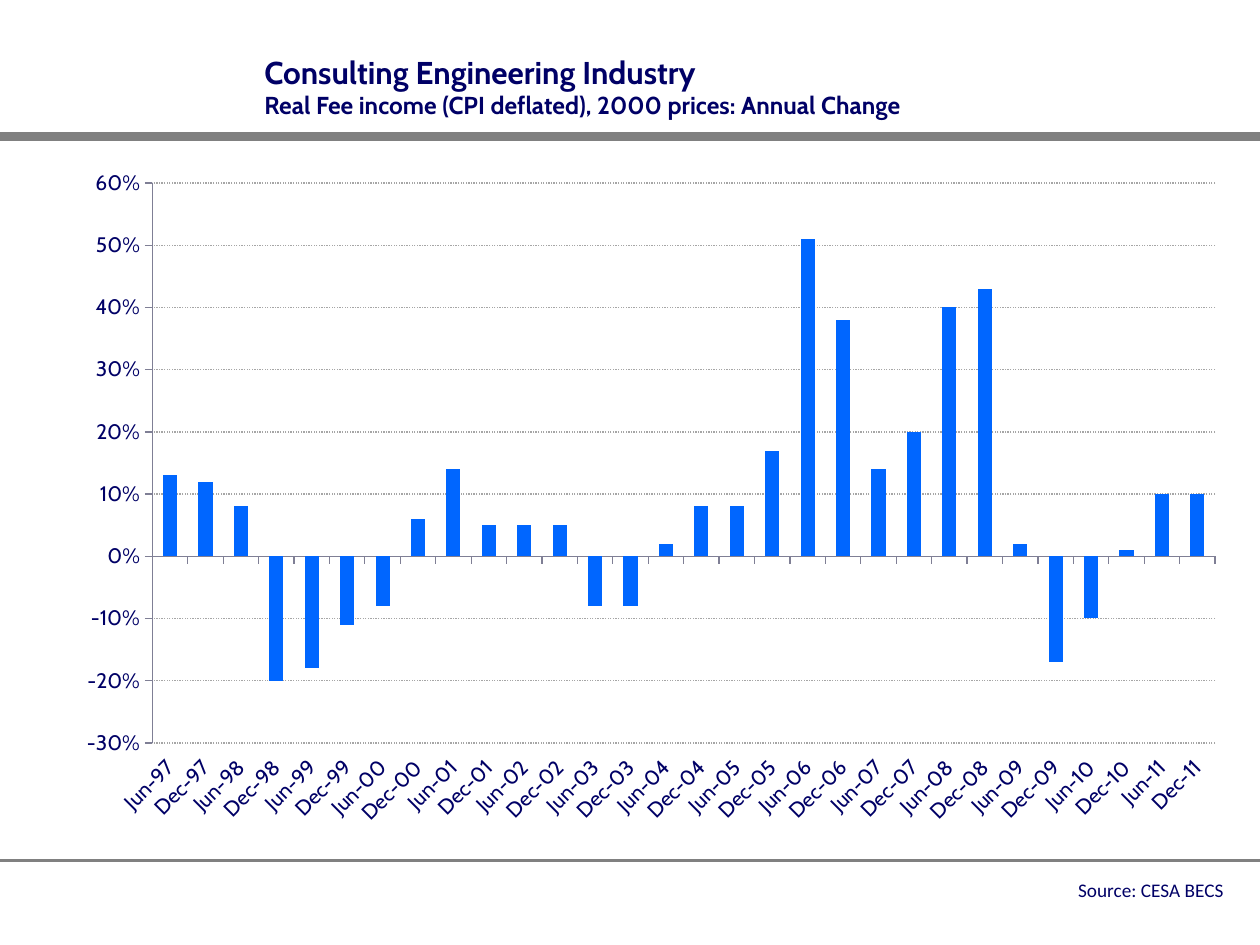
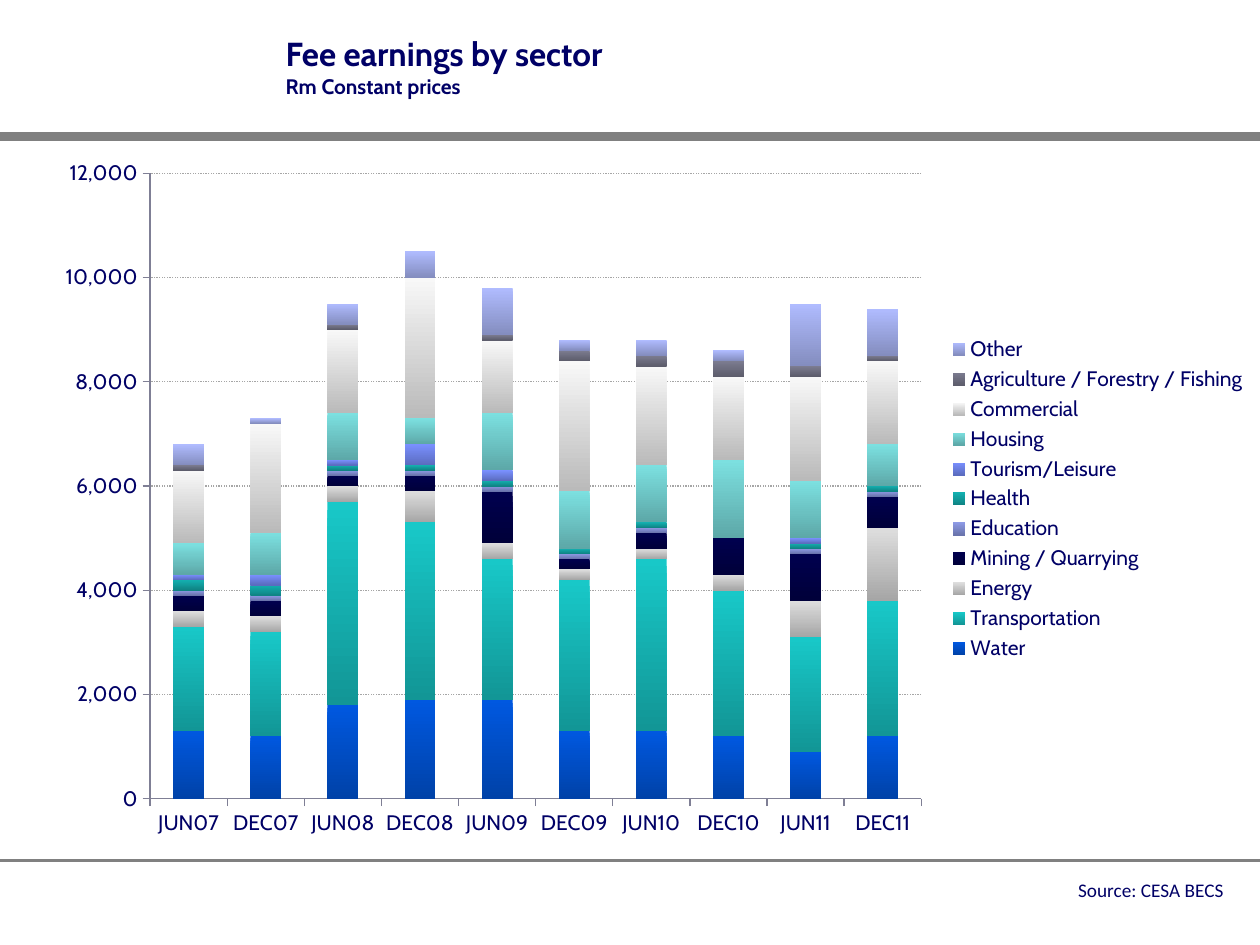
import pptx
import pptx.chart.data
import pptx.dml.color
import pptx.enum.chart
import pptx.enum.dml
import pptx.enum.shapes
import pptx.enum.text
import pptx.oxml
import pptx.oxml.ns
import pptx.util

Cm, Pt = pptx.util.Cm, pptx.util.Pt
RGB = pptx.dml.color.RGBColor.from_string


class Theme:
    navy = RGB("000066")
    rule = RGB("808080")
    grid = RGB("A6A6A6")
    axis = RGB("7F7F95")
    bar = RGB("0066FF")
    shade = 0.75  # bottom of a sector gradient relative to its top
    font = "Cabin"
    source_font = "Calibri"
    chart_size = Pt(12)
    source_size = Pt(11)


def add_frame(prs, title, subtitle, box, sizes):
    """Add a slide with its title, rules and source line."""
    s = prs.slides.add_slide(prs.slide_layouts[6])
    # Horizontal rules
    for y, weight in ((2.75, 5), (17.35, 2)):
        sp = s.shapes.add_connector(pptx.enum.shapes.MSO_CONNECTOR.STRAIGHT,
                                    0, Cm(y), prs.slide_width, Cm(y))
        sp.line.color.rgb = Theme.rule
        sp.line.width = Pt(weight)
        pptx.oxml.ns.qn("a:effectLst")
        sp._element.spPr.append(pptx.oxml.parse_xml(
            "<a:effectLst %s/>" % pptx.oxml.ns.nsdecls("a")))
    # Title over subtitle
    tf = s.shapes.add_textbox(*map(Cm, box)).text_frame
    tf.word_wrap = True
    tf.vertical_anchor = pptx.enum.text.MSO_ANCHOR.BOTTOM
    p = tf.paragraphs[0]
    p.font.name, p.font.bold, p.font.color.rgb = Theme.font, True, Theme.navy
    for i, (text, size) in enumerate(zip((title, subtitle), sizes)):
        if i:
            p.add_line_break()
        r = p.add_run()
        r.text, r.font.size = text, Pt(size)
    # Source line
    tf = s.shapes.add_textbox(Cm(21.44), Cm(17.58), Cm(3.48), Cm(0.74)).text_frame
    tf.word_wrap = False
    p = tf.paragraphs[0]
    p.text = "Source: CESA BECS"
    p.alignment = pptx.enum.text.PP_ALIGN.RIGHT
    p.font.name, p.font.size = Theme.source_font, Theme.source_size
    p.font.color.rgb = Theme.navy
    return s


def add_columns(s, kind, box, plot_box, categories, series, number_format, scale):
    """Add a column chart with the shared axis and grid style."""
    data = pptx.chart.data.CategoryChartData()
    data.categories = categories
    for name, values in series:
        data.add_series(name, values)
    chart = s.shapes.add_chart(kind, *map(Cm, box), data).chart
    chart.has_title = False
    chart.has_legend = False
    chart.font.name, chart.font.size = Theme.font, Theme.chart_size
    chart.font.color.rgb = Theme.navy
    chart.plots[0].gap_width = 150
    chart.plots[0].vary_by_categories = False
    for axis in (chart.category_axis, chart.value_axis):
        axis.format.line.color.rgb = Theme.axis
        axis.major_tick_mark = pptx.enum.chart.XL_TICK_MARK.OUTSIDE
        axis.minor_tick_mark = pptx.enum.chart.XL_TICK_MARK.NONE
    axis = chart.value_axis
    axis.minimum_scale, axis.maximum_scale, axis.major_unit = scale
    axis.tick_labels.number_format = number_format
    axis.tick_labels.number_format_is_linked = False
    line = axis.major_gridlines.format.line
    line.color.rgb, line.width = Theme.grid, Pt(0.75)
    line.dash_style = pptx.enum.dml.MSO_LINE.ROUND_DOT
    # Fixed inner plot area, as fractions of the chart
    area = chart._chartSpace.chart.plotArea
    for old in area.findall(pptx.oxml.ns.qn("c:layout")):
        area.remove(old)
    parts = "".join('<c:%s val="%s"/>' % pair for pair in zip("xywh", plot_box))
    area.insert(0, pptx.oxml.parse_xml(
        '<c:layout %s><c:manualLayout><c:layoutTarget val="inner"/>'
        '<c:xMode val="edge"/><c:yMode val="edge"/>%s</c:manualLayout></c:layout>'
        % (pptx.oxml.ns.nsdecls("c"), parts)))
    return chart


prs = pptx.Presentation()
prs.slide_width, prs.slide_height = Cm(25.4), Cm(19.05)

# Slide 1: annual change in real fee income
s = add_frame(prs, "Consulting Engineering Industry",
              "Real Fee income (CPI deflated), 2000 prices: Annual Change",
              (5.08, 0.64, 18.85, 1.9), (18, 14))
half_years = [f"{month}-{year % 100:02}"
              for year in range(1997, 2012) for month in ("Jun", "Dec")]
change = [0.13, 0.12, 0.08, -0.2, -0.18, -0.11, -0.08, 0.06, 0.14, 0.05,
          0.05, 0.05, -0.08, -0.08, 0.02, 0.08, 0.08, 0.17, 0.51, 0.38,
          0.14, 0.2, 0.4, 0.43, 0.02, -0.17, -0.1, 0.01, 0.1, 0.1]
chart = add_columns(s, pptx.enum.chart.XL_CHART_TYPE.COLUMN_CLUSTERED,
                    (1.27, 3.18, 23.7, 13.77), (0.076, 0.037, 0.904, 0.82),
                    half_years, [("Series 1", change)], "0%", (-0.3, 0.6, 0.1))
axis = chart.category_axis
axis.tick_label_position = pptx.enum.chart.XL_TICK_LABEL_POSITION.LOW
axis.tick_labels.font.size = Theme.chart_size
axis._element.txPr.bodyPr.set("rot", "-2700000")
bars = chart.plots[0].series[0]
bars.invert_if_negative = False
bars.format.fill.solid()
bars.format.fill.fore_color.rgb = Theme.bar

# Slide 2: fee earnings by sector
s = add_frame(prs, "Fee earnings by sector", "Rm Constant prices",
              (5.51, 0.84, 18.42, 1.27), (19, 12))
half_years = [f"{month}{year:02}" for year in range(7, 12) for month in ("JUN", "DEC")]
# Sector, colour at the top of the gradient, values
sectors = [
    ("Water", "0058E0", [1300, 1200, 1800, 1900, 1900, 1300, 1300, 1200, 900, 1200]),
    ("Transportation", "18C8C8",
     [2000, 2000, 3900, 3400, 2700, 2900, 3300, 2800, 2200, 2600]),
    ("Energy", "DEDEDE", [300, 300, 300, 600, 300, 200, 200, 300, 700, 1400]),
    ("Mining / Quarrying", "00004E", [300, 300, 200, 300, 1000, 200, 300, 700, 900, 600]),
    ("Education", "8E9BE6", [100, 100, 100, 100, 100, 100, 100, 0, 100, 100]),
    ("Health", "14B0B0", [200, 200, 100, 100, 100, 100, 100, 0, 100, 100]),
    ("Tourism/Leisure", "7A90FF", [100, 200, 100, 400, 200, 0, 0, 0, 100, 0]),
    ("Housing", "7CE0E0", [600, 800, 900, 500, 1100, 1100, 1100, 1500, 1100, 800]),
    ("Commercial", "F8F8F8",
     [1400, 2100, 1600, 2700, 1400, 2500, 1900, 1600, 2000, 1600]),
    ("Agriculture / Forestry / Fishing", "7C7C90",
     [100, 0, 100, 0, 100, 200, 200, 300, 200, 100]),
    ("Other", "B0BCFF", [400, 100, 400, 500, 900, 200, 300, 200, 1200, 900]),
]
chart = add_columns(s, pptx.enum.chart.XL_CHART_TYPE.COLUMN_STACKED,
                    (0.84, 2.97, 24.56, 14.17), (0.089, 0.037, 0.633, 0.89),
                    half_years, [(name, values) for name, _, values in sectors],
                    "#,##0", (0, 12000, 2000))
chart.plots[0].overlap = 100
chart.has_legend = True
chart.legend.position = pptx.enum.chart.XL_LEGEND_POSITION.RIGHT
chart.legend.include_in_layout = False
for bars, (_, colour, _) in zip(chart.plots[0].series, sectors):
    top = RGB(colour)
    bottom = pptx.dml.color.RGBColor(*(int(v * Theme.shade) for v in top))
    fill = bars.format.fill
    fill.gradient()
    fill.gradient_angle = 270
    for stop, rgb in zip(fill.gradient_stops, (top, bottom)):
        stop.color.rgb = rgb

prs.save("out.pptx")
